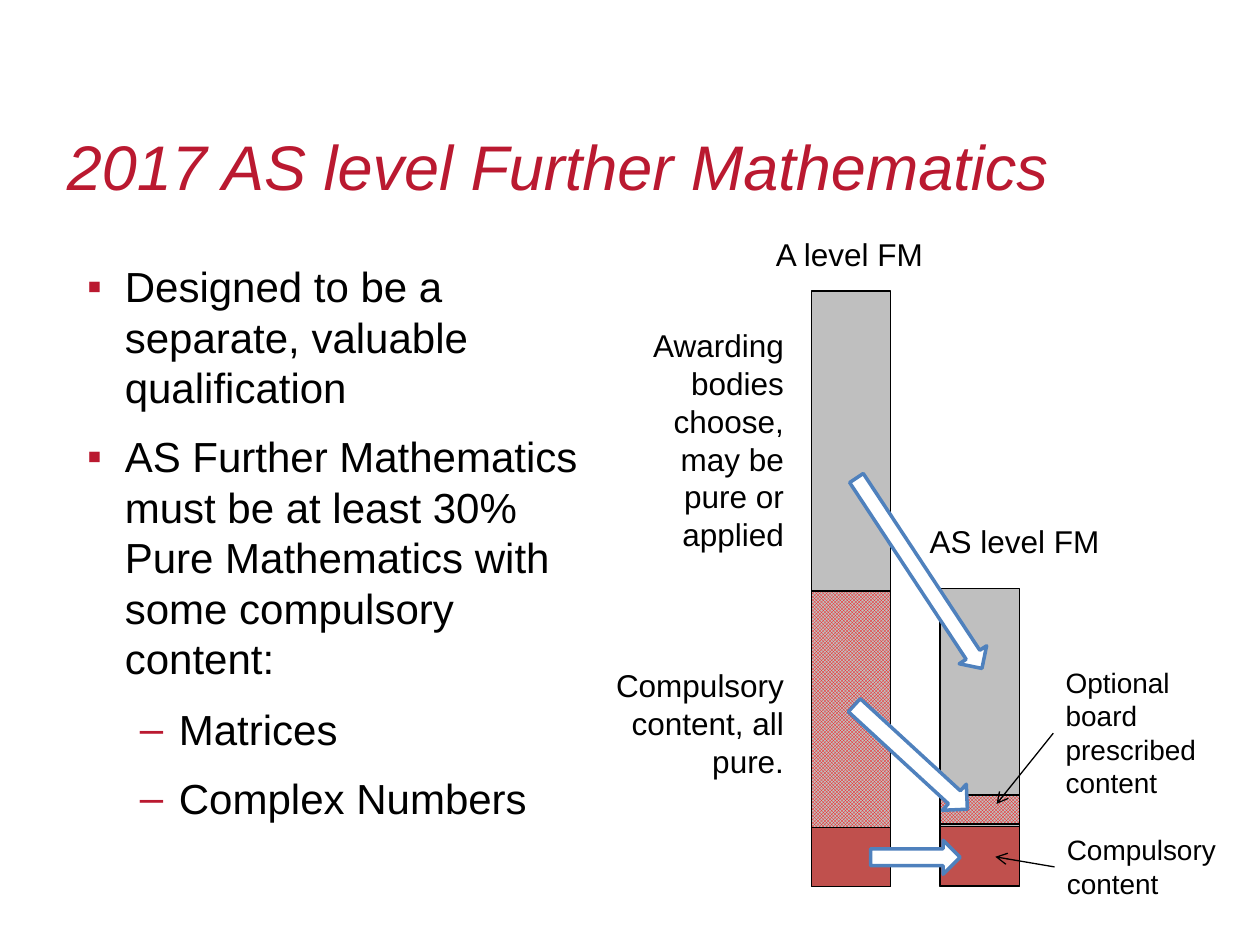
from dataclasses import dataclass

from lxml import etree
from pptx import Presentation
from pptx.dml.color import RGBColor
from pptx.enum import dml, shapes, text
from pptx.oxml import ns
from pptx.slide import Slide
from pptx.util import Pt

BLACK = RGBColor(0x00, 0x00, 0x00)
WHITE = RGBColor(0xFF, 0xFF, 0xFF)
CRIMSON = RGBColor(0xBA, 0x19, 0x30)
GREY = RGBColor(0xBF, 0xBF, 0xBF)
BRICK = RGBColor(0xC0, 0x50, 0x4D)
RED = RGBColor(0xFF, 0x00, 0x00)
BLUE = RGBColor(0x4F, 0x81, 0xBD)
FACE = "Arial"
BAR = 45.4
FULL, HALF = 463.7, 537.1
LEFT, RIGHT = text.PP_ALIGN.LEFT, text.PP_ALIGN.RIGHT


@dataclass
class Block:
    left: float
    top: float
    high: float
    color: RGBColor
    check: bool = False


@dataclass
class Arrow:
    left: float
    top: float
    wide: float
    high: float
    turn: float = 0


@dataclass
class Label:
    words: str
    left: float
    top: float
    wide: float
    high: float
    size: float = 18
    align: text.PP_ALIGN = LEFT
    wrap: bool = True


@dataclass
class Pointer:
    x1: float
    y1: float
    x2: float
    y2: float


@dataclass
class Point:
    words: str
    level: int = 0


BLOCKS = [
    Block(FULL, 199.4, 306.7, GREY, True),
    Block(FULL, 166.3, 171.4, GREY),
    Block(HALF, 336.2, 170.6, GREY),
    Block(HALF, 472.3, 33.8, BRICK),
    Block(HALF, 454.3, 16.6, GREY, True),
    Block(FULL, 473, 33.8, BRICK),
]
ARROWS = [
    Arrow(497.5, 480.2, 51.1, 19.4),
    Arrow(476.6, 422.6, 87.8, 20.2, 42.6),
    Arrow(460.1, 318.2, 130.3, 18.7, 56.6),
]
LABELS = [
    Label("Awarding bodies choose, may be pure or applied",
          364.3, 182.9, 90.7, 138.2, align=RIGHT),
    Label("Compulsory content, all pure.", 337.7, 377.3, 117.4, 94.3, align=RIGHT),
    Label("Compulsory\vcontent", 602.6, 472.3, 105.1, 46.1, 16),
    Label("Optional board prescribed content", 601.9, 376.6, 105.1, 85, 16),
    Label("A level FM", 436.3, 131, 99.4, 28.8, wrap=False),
    Label("AS level FM", 524.2, 294.5, 112.3, 28.8, wrap=False),
]
POINTERS = [
    Pointer(601.9, 419, 569.5, 459.4),
    Pointer(602.6, 495.4, 568.8, 489.6),
]
POINTS = [
    Point("Designed to be a separate, valuable qualification"),
    Point("AS Further Mathematics must be at least 30% Pure Mathematics "
          "with some compulsory content:"),
    Point("Matrices", 1),
    Point("Complex Numbers", 1),
]


def place(shape, left: float, top: float, wide: float, high: float) -> None:
    shape.left, shape.top = Pt(left), Pt(top)
    shape.width, shape.height = Pt(wide), Pt(high)


def style(para, size: float, color: RGBColor) -> None:
    font = para.font
    font.name, font.size = FACE, Pt(size)
    font.color.rgb = color


def add_bullet(para, level: int) -> None:
    mark, indent, hang = (("▪", 27.4, -21.6), ("–", 58.3, -22.3))[level]
    props = para._p.get_or_add_pPr()
    props.set("marL", str(Pt(indent)))
    props.set("indent", str(Pt(hang)))
    tint = etree.SubElement(props, ns.qn("a:buClr"))
    etree.SubElement(tint, ns.qn("a:srgbClr"), val=str(CRIMSON))
    etree.SubElement(props, ns.qn("a:buFont"), typeface=FACE)
    etree.SubElement(props, ns.qn("a:buChar"), char=mark)


def fill_title(slide: Slide) -> None:
    title = slide.shapes.title
    place(title, 31, 64, 642, 61)
    frame = title.text_frame
    frame.text = "2017 AS level Further Mathematics"
    frame.auto_size = text.MSO_AUTO_SIZE.NONE
    frame.vertical_anchor = text.MSO_ANCHOR.MIDDLE
    para = frame.paragraphs[0]
    para.alignment = LEFT
    style(para, 36, CRIMSON)
    para.font.italic = True


def fill_body(slide: Slide) -> None:
    body = slide.placeholders[1]
    place(body, 36.7, 145.4, 311.8, 339.8)
    frame = body.text_frame
    frame.text = "\n".join(point.words for point in POINTS)
    frame.auto_size = text.MSO_AUTO_SIZE.NONE
    for row, (para, point) in enumerate(zip(frame.paragraphs, POINTS)):
        para.level = point.level
        add_bullet(para, point.level)
        before, after = ((4.8, 6), (5.7, 5))[point.level]
        para.space_before = Pt(before if row else 0)
        para.space_after = Pt(after)
        style(para, 24, BLACK)


def add_block(slide: Slide, block: Block) -> None:
    shape = slide.shapes.add_shape(
        shapes.MSO_SHAPE.RECTANGLE, Pt(block.left), Pt(block.top), Pt(BAR), Pt(block.high))
    shape.shadow.inherit = False
    if block.check:
        shape.fill.patterned()
        shape.fill.pattern = dml.MSO_PATTERN.SMALL_CHECKER_BOARD
        shape.fill.fore_color.rgb = RED
        shape.fill.back_color.rgb = block.color
    else:
        shape.fill.solid()
        shape.fill.fore_color.rgb = block.color
    shape.line.color.rgb = BLACK
    shape.line.width = Pt(0.75)


def add_arrow(slide: Slide, arrow: Arrow) -> None:
    shape = slide.shapes.add_shape(
        shapes.MSO_SHAPE.RIGHT_ARROW,
        Pt(arrow.left), Pt(arrow.top), Pt(arrow.wide), Pt(arrow.high))
    shape.rotation = arrow.turn
    shape.shadow.inherit = False
    shape.fill.solid()
    shape.fill.fore_color.rgb = WHITE
    shape.line.color.rgb = BLUE
    shape.line.width = Pt(2)


def add_label(slide: Slide, label: Label) -> None:
    box = slide.shapes.add_textbox(
        Pt(label.left), Pt(label.top), Pt(label.wide), Pt(label.high))
    frame = box.text_frame
    frame.word_wrap = label.wrap
    para = frame.paragraphs[0]
    para.text = label.words
    para.alignment = label.align
    style(para, label.size, BLACK)


def add_pointer(slide: Slide, ray: Pointer) -> None:
    line = slide.shapes.add_connector(
        shapes.MSO_CONNECTOR.STRAIGHT, Pt(ray.x1), Pt(ray.y1), Pt(ray.x2), Pt(ray.y2))
    line.line.color.rgb = BLACK
    line.line.width = Pt(0.75)
    props = line._element.spPr
    etree.SubElement(props.find(ns.qn("a:ln")), ns.qn("a:tailEnd"), type="arrow")
    etree.SubElement(props, ns.qn("a:effectLst"))


def main() -> None:
    deck = Presentation()
    deck.slide_width, deck.slide_height = Pt(720), Pt(540)
    slide = deck.slides.add_slide(deck.slide_layouts[1])
    fill_title(slide)
    fill_body(slide)
    for draw, items in ((add_block, BLOCKS), (add_arrow, ARROWS),
                        (add_label, LABELS), (add_pointer, POINTERS)):
        for item in items:
            draw(slide, item)
    deck.save("out.pptx")


if __name__ == "__main__":
    main()
